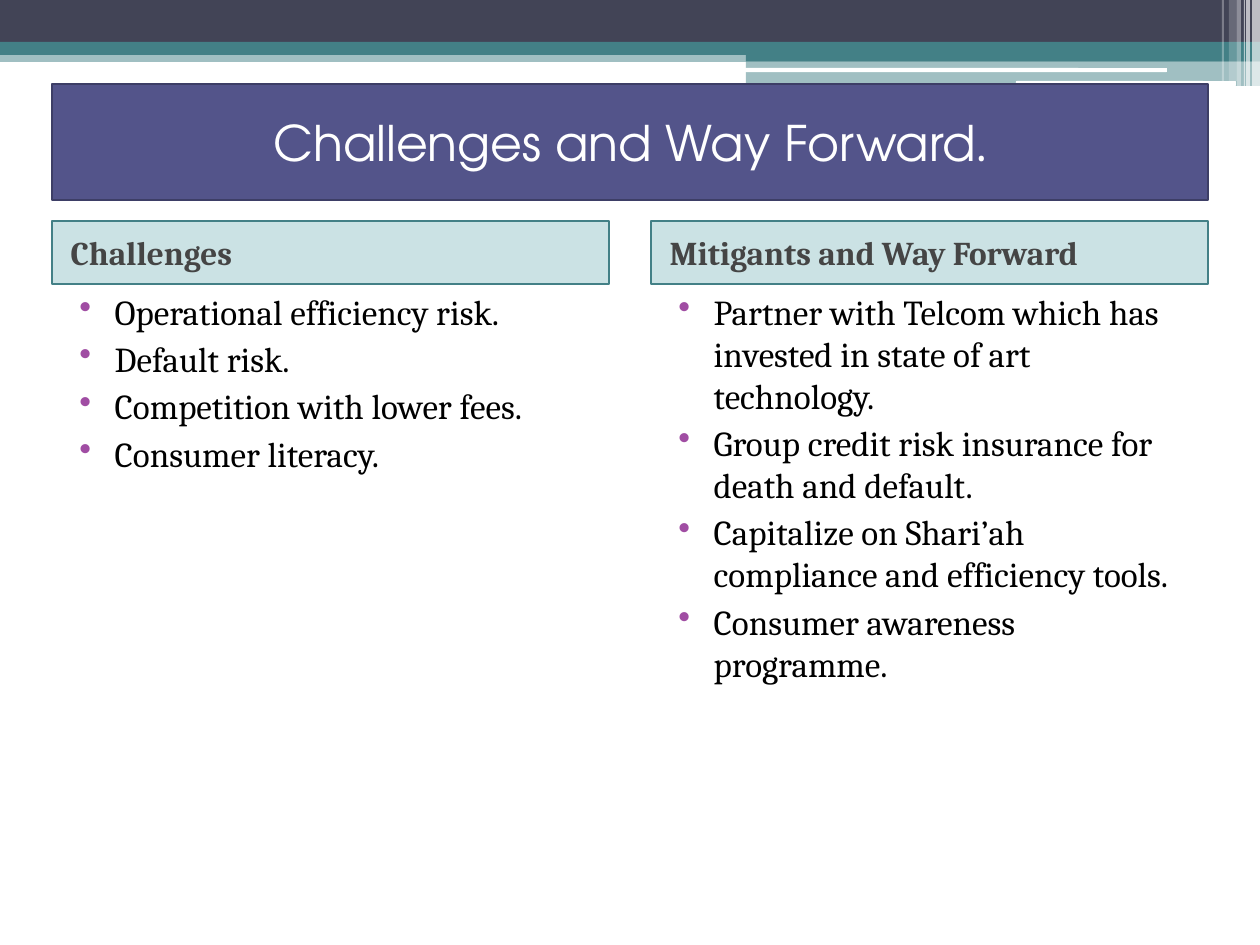
import pptx
import pptx.util
import pptx.dml.color
import pptx.enum.shapes
import pptx.enum.text
import pptx.oxml
import pptx.oxml.ns

TITLE = [("Challenges and Way Forward", "TeX Gyre Adventor"), (".", "Cambria")]
COLUMNS = [
    ("Challenges", [
        "Operational efficiency risk.",
        "Default risk.",
        "Competition with lower fees.",
        "Consumer literacy.",
    ]),
    ("Mitigants and Way Forward", [
        "Partner with Telcom which has invested in state of art technology.",
        "Group credit risk insurance for death and default.",
        "Capitalize on Shari’ah compliance and efficiency tools.",
        "Consumer awareness programme.",
    ]),
]
BANDS = [
    (0, 50, 1260, 12, "438086", 50),
    (0, 0, 1260, 43, "424456", 100),
    (0, 42, 1260, 13, "438086", 100),
    (746, 49, 514, 12, "438086", 100),
    (746, 61, 514, 25, "438086", 50),
]
PILLS = [(745, 68, 422, 4), (1016, 81, 220, 5)]
STRIPES = [
    (1252, 8, 86, 65),
    (1246, 4, 86, 65),
    (1244, 1, 86, 60),
    (1237, 4, 86, 40),
    (1229, 8, 81, 20),
    (1222, 2, 81, 30),
]
LEFT, WIDE, GAP = 52, 557, 42
HEAD_TOP, HEAD_TALL, LIST_TALL = 221, 63, 625
HEAD = {"size": pptx.util.Pt(19), "name": "Cambria", "bold": True}
ITEM = {"size": pptx.util.Pt(20), "name": "Cambria"}
KIND = pptx.enum.shapes.MSO_SHAPE
MIDDLE = pptx.enum.text.MSO_ANCHOR.MIDDLE
ALIGN = pptx.enum.text.PP_ALIGN


def px(n):
    return pptx.util.Emu(round(n * 914400 / 126))


def tint(fmt, hue):
    fmt.rgb = pptx.dml.color.RGBColor.from_string(hue)


def paint(shape, hue, alpha=100, edge=None, width=1):
    shape.fill.solid()
    tint(shape.fill.fore_color, hue)
    if alpha < 100:
        color = shape._element.spPr.find(".//" + pptx.oxml.ns.qn("a:srgbClr"))
        node = pptx.oxml.parse_xml(
            f'<a:alpha {pptx.oxml.ns.nsdecls("a")} val="{alpha * 1000}"/>')
        color.append(node)
    if edge:
        tint(shape.line.color, edge)
        shape.line.width = pptx.util.Pt(width)
    else:
        shape.line.fill.background()


def block(slide, kind, box, *style):
    shape = slide.shapes.add_shape(kind, *map(px, box))
    shape.shadow.inherit = False
    paint(shape, *style)
    return shape


def write(para, text, hue, look):
    run = para.add_run()
    run.text = text
    tint(run.font.color, hue)
    for key, value in look.items():
        setattr(run.font, key, value)


def indent(para, left, first=0, bullet=None):
    props = para._p.get_or_add_pPr()
    props.set("marL", str(pptx.util.Inches(left)))
    props.set("indent", str(pptx.util.Inches(first)))
    para.alignment = ALIGN.LEFT
    para.space_before = pptx.util.Pt(3)
    if bullet:
        names = pptx.oxml.ns.nsdecls("a")
        for part in (f'<a:buClr {names}><a:srgbClr val="{bullet}"/></a:buClr>',
                     f'<a:buChar {names} char="•"/>'):
            props.append(pptx.oxml.parse_xml(part))


def column(slide, left, head, items):
    bar = block(slide, KIND.RECTANGLE, (left, HEAD_TOP, WIDE, HEAD_TALL),
                "328E97", 25, "438086")
    bar.text_frame.vertical_anchor = MIDDLE
    para = bar.text_frame.paragraphs[0]
    indent(para, 0.05)
    write(para, head, "454545", HEAD)
    box = slide.shapes.add_textbox(
        *map(px, (left, HEAD_TOP + HEAD_TALL, WIDE, LIST_TALL)))
    frame = box.text_frame
    frame.word_wrap = True
    for i, item in enumerate(items):
        para = frame.add_paragraph() if i else frame.paragraphs[0]
        indent(para, 0.4, -0.28, "A04DA3")
        write(para, item, "000000", ITEM)


def banner(slide):
    title = slide.shapes.title
    box = (LEFT, 84, 2 * WIDE + GAP, 116)
    for key, value in zip(("left", "top", "width", "height"), box):
        setattr(title, key, px(value))
    paint(title, "53548A", 100, "3D3E66", 1.5)
    title.text_frame.vertical_anchor = MIDDLE
    para = title.text_frame.paragraphs[0]
    para.alignment = ALIGN.CENTER
    for text, face in TITLE:
        write(para, text, "FFFFFF", {"size": pptx.util.Pt(28), "name": face})
    slide.shapes._spTree.append(title._element)


def main():
    deck = pptx.Presentation()
    deck.slide_width, deck.slide_height = px(1260), px(945)
    slide = deck.slides.add_slide(deck.slide_layouts[5])
    for *box, hue, alpha in BANDS:
        block(slide, KIND.RECTANGLE, box, hue, alpha)
    for box in PILLS:
        block(slide, KIND.ROUNDED_RECTANGLE, box, "FFFFFF")
    for left, wide, tall, alpha in STRIPES:
        block(slide, KIND.RECTANGLE, (left, 0, wide, tall), "FFFFFF", alpha)
    for i, (head, items) in enumerate(COLUMNS):
        column(slide, LEFT + i * (WIDE + GAP), head, items)
    banner(slide)
    deck.save("out.pptx")


if __name__ == "__main__":
    main()
